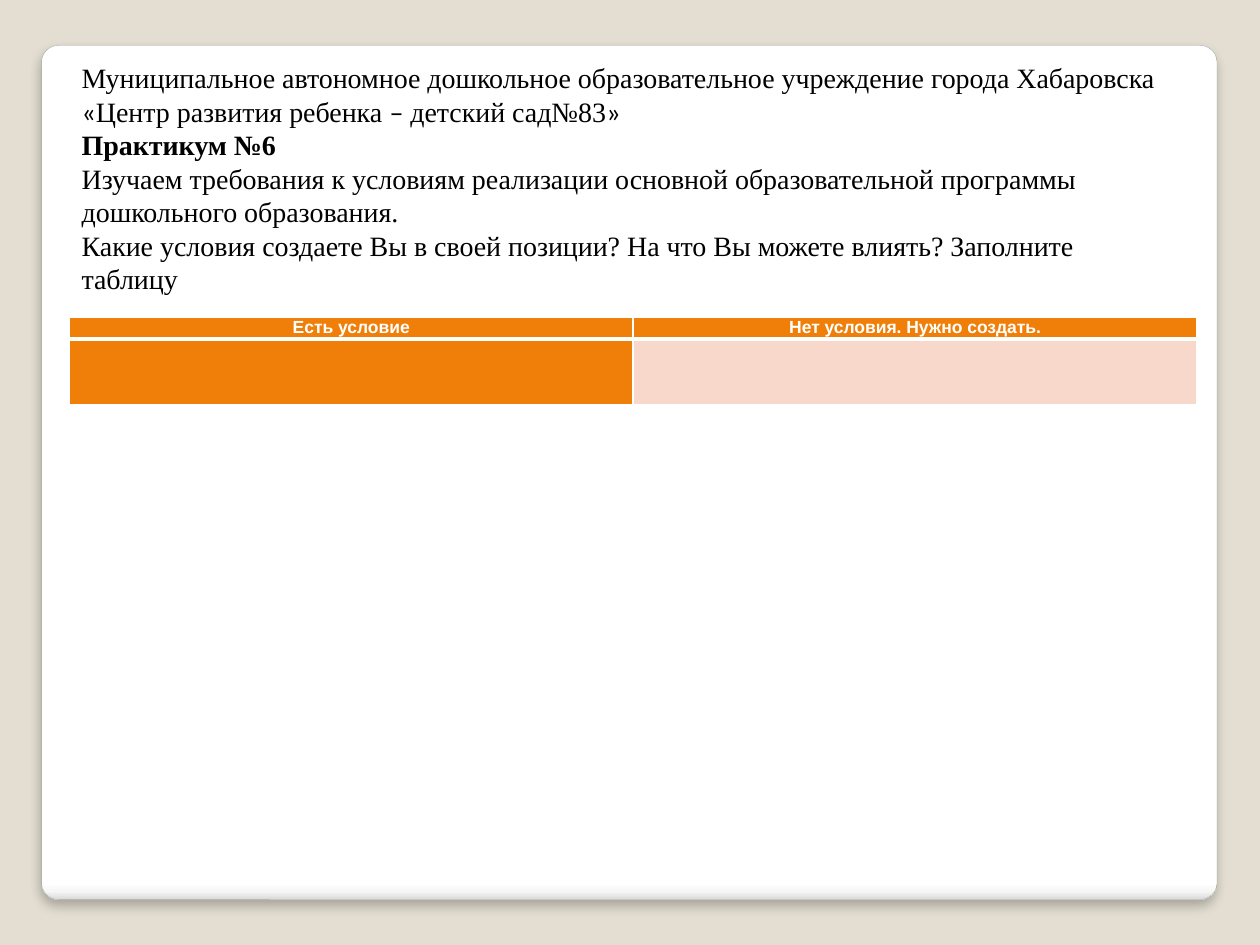
from lxml.etree import SubElement
from pptx import Presentation
from pptx.dml.color import RGBColor
from pptx.enum.shapes import MSO_SHAPE as Shape
from pptx.enum.text import MSO_ANCHOR as Anchor, PP_ALIGN as Align
from pptx.oxml import parse_xml
from pptx.oxml.ns import nsdecls, qn
from pptx.util import Inches, Pt

ORANGE, PINK, WHITE, BLACK = "F07F09", "F9D8CC", "FFFFFF", "000000"
SERIF, SANS = "Times New Roman", "Calibri"
PANEL_STOPS = [(0, WHITE), (98, WHITE), (99, "F7F7F7"), (100, "DADADA")]

INTRO = [
    [("Муниципальное автономное дошкольное образовательное учреждение города Хабаровска", SERIF)],
    [("«", SANS), ("Центр развития ребенка ", SERIF), ("–", SANS),
     (" детский сад№83", SERIF), ("»", SANS)],
    [("Практикум №6", SERIF)],
    [("Изучаем требования к условиям реализации основной образовательной программы "
      "дошкольного образования.", SERIF)],
    [("Какие условия создаете Вы в своей позиции? На что Вы можете влиять? "
      "Заполните таблицу", SERIF)],
]
HEADING_INDEX = 2
CONDITIONS = [
    [("Есть условие", ORANGE), ("Нет условия. Нужно создать.", ORANGE)],
    [("", ORANGE), ("", PINK)],
]


def paint(fill, color):
    fill.solid()
    fill.fore_color.rgb = RGBColor.from_string(color)


def style_run(run, font, size, color, bold=False):
    run.font.name = font
    run.font.size = Pt(size)
    run.font.bold = bold
    run.font.color.rgb = RGBColor.from_string(color)


def add_panel(slide):
    panel = slide.shapes.add_shape(
        Shape.ROUNDED_RECTANGLE, Inches(0.33), Inches(0.36), Inches(9.33), Inches(6.78))
    panel.adjustments[0] = 0.02
    panel.line.width = Pt(0.16)
    paint(panel.line.fill, "A4A4A4")
    panel.fill.gradient()
    properties = panel.element.spPr
    gradient = properties.find(qn("a:gradFill"))
    stops = "".join(
        f'<a:gs pos="{percent * 1000}"><a:srgbClr val="{color}"/></a:gs>'
        for percent, color in PANEL_STOPS)
    properties.replace(gradient, parse_xml(
        f'<a:gradFill {nsdecls("a")}><a:gsLst>{stops}</a:gsLst>'
        '<a:lin ang="5400000" scaled="0"/></a:gradFill>'))
    properties.append(parse_xml(
        f'<a:effectLst {nsdecls("a")}><a:outerShdw blurRad="{Pt(6)}" dist="{Pt(4)}" '
        f'dir="5400000" rotWithShape="0"><a:srgbClr val="{BLACK}"><a:alpha val="25000"/>'
        '</a:srgbClr></a:outerShdw></a:effectLst>'))


def set_borders(cell, **widths):
    properties = cell._tc.get_or_add_tcPr()
    for side in "LRTB":
        border = SubElement(properties, qn(f"a:ln{side}"), w=str(Pt(widths.get(side, 1))))
        SubElement(SubElement(border, qn("a:solidFill")), qn("a:srgbClr"), val=WHITE)


def add_conditions(slide):
    table = slide.shapes.add_table(
        2, 2, Inches(0.55), Inches(2.52), Inches(8.95), Inches(0.7)).table
    for row, height in zip(table.rows, (0.17, 0.52)):
        row.height = Inches(height)
    for row_index, entries in enumerate(CONDITIONS):
        for column_index, (label, color) in enumerate(entries):
            cell = table.cell(row_index, column_index)
            set_borders(cell, **({"T": 3} if row_index else {"B": 3}))
            paint(cell.fill, color)
            if label:
                cell.margin_left = cell.margin_right = Inches(0.07)
                cell.margin_top = cell.margin_bottom = 0
                cell.text_frame.text = label
                paragraph = cell.text_frame.paragraphs[0]
                paragraph.alignment = Align.CENTER
                style_run(paragraph.runs[0], "Arial", 10, WHITE, bold=True)


def add_intro(slide):
    frame = slide.shapes.add_textbox(
        Inches(0.55), Inches(0.4), Inches(8.86), Inches(6.02)).text_frame
    frame.word_wrap = True
    frame.vertical_anchor = Anchor.TOP
    frame.margin_top = Inches(0.08)
    for index, pieces in enumerate(INTRO):
        paragraph = frame.add_paragraph() if index else frame.paragraphs[0]
        for words, font in pieces:
            run = paragraph.add_run()
            run.text = words
            style_run(run, font, 16, BLACK, bold=index == HEADING_INDEX)


def main():
    deck = Presentation()
    deck.slide_width, deck.slide_height = Inches(10), Inches(7.5)
    slide = deck.slides.add_slide(deck.slide_layouts[6])
    paint(slide.background.fill, "E3DED1")
    add_panel(slide)
    add_conditions(slide)
    add_intro(slide)
    deck.save("out.pptx")


if __name__ == "__main__":
    main()
